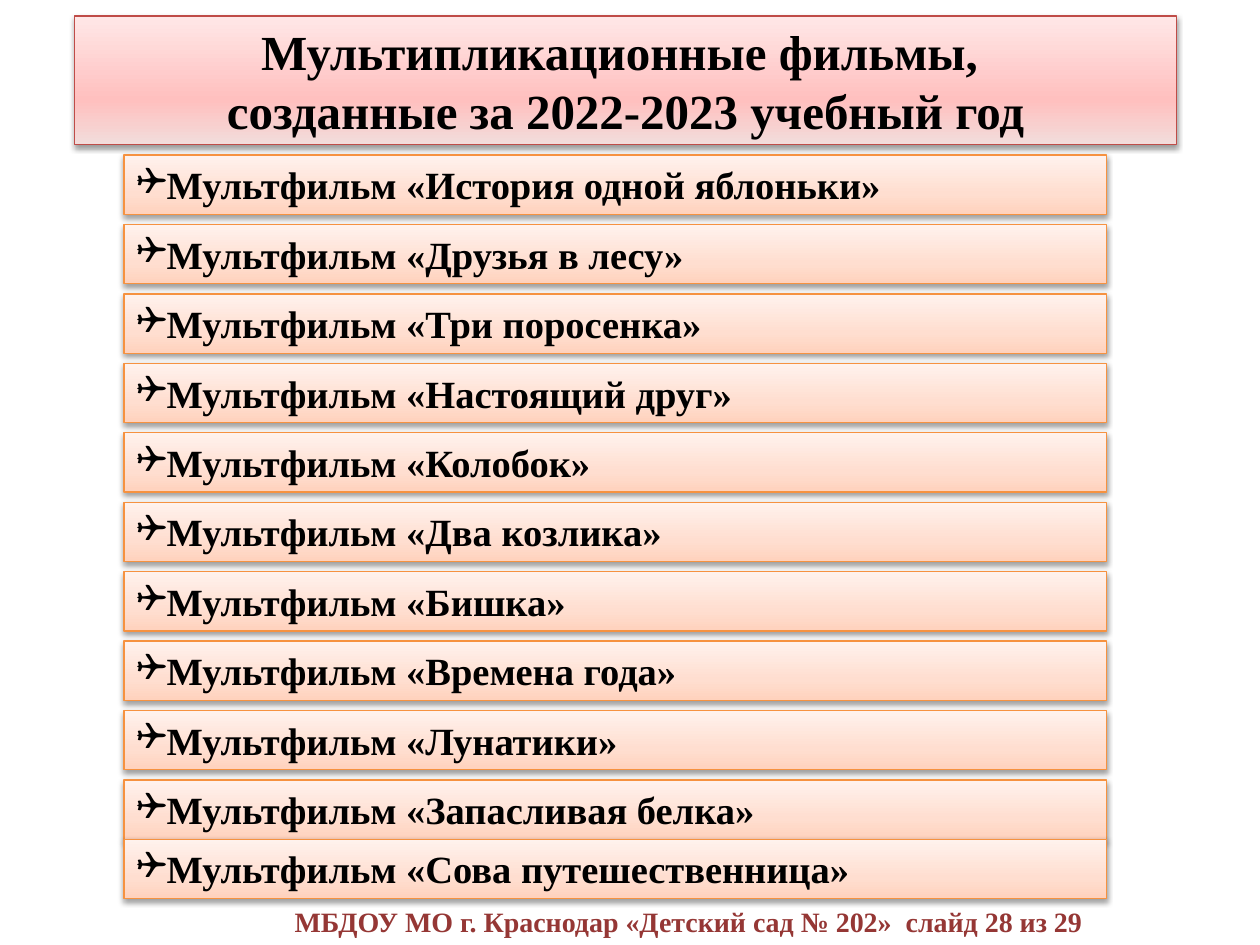
"""Build the slide that lists the cartoons made in the 2022-2023 school year."""
import dataclasses

import lxml.etree
import pptx
import pptx.dml.color
import pptx.enum.shapes
import pptx.enum.text
import pptx.oxml.ns
import pptx.util

Pt = pptx.util.Pt
qn = pptx.oxml.ns.qn
ALIGN = pptx.enum.text.PP_ALIGN
ANCHOR = pptx.enum.text.MSO_ANCHOR
AUTO_SIZE = pptx.enum.text.MSO_AUTO_SIZE

COLORS = {
    "text": "000000",
    "footer": "953735",
    "shadow": "000000",
    "title_line": "BF4C48",
    "title_bottom": "F2DCDB",
    "title_middle": "FFC0BF",
    "title_top": "FFE7E7",
    "film_line": "F69240",
    "film_bottom": "FFD2BD",
    "film_middle": "FFDED0",
    "film_top": "FFF2ED",
}

HEADING = ["Мультипликационные фильмы, ", "созданные за 2022-2023 учебный год"]
FOOTER = "МБДОУ МО г. Краснодар «Детский сад № 202»  слайд 28 из 29"
FILMS = [
    "История одной яблоньки",
    "Друзья в лесу",
    "Три поросенка",
    "Настоящий друг",
    "Колобок",
    "Два козлика",
    "Бишка",
    "Времена года",
    "Лунатики",
    "Запасливая белка",
    "Сова путешественница",
]
FIRST_TOP, FILM_STEP, FILM_HEIGHT = 88.6, 39.68, 33.9


@dataclasses.dataclass
class Film:
    name: str
    top: float


def rgb(key: str) -> pptx.dml.color.RGBColor:
    """Return the named colour."""
    return pptx.dml.color.RGBColor.from_string(COLORS[key])


def place(shape, left: float, top: float, width: float, height: float) -> None:
    """Set the position and size of a shape in points."""
    shape.left, shape.top = Pt(left), Pt(top)
    shape.width, shape.height = Pt(width), Pt(height)


def add_color(parent, key: str):
    """Append the named colour to an XML element and return it."""
    return lxml.etree.SubElement(parent, qn("a:srgbClr"), val=COLORS[key])


def style_panel(shape, theme: str) -> None:
    """Give a panel its upward gradient, thin outline and soft shadow."""
    shape.fill.gradient()
    shape.fill.gradient_angle = 90
    stops = shape._element.spPr.find(".//" + qn("a:gsLst"))
    for stop in list(stops):
        stops.remove(stop)
    for percent, part in ((0, "bottom"), (35, "middle"), (100, "top")):
        stop = lxml.etree.SubElement(stops, qn("a:gs"), pos=str(percent * 1000))
        add_color(stop, f"{theme}_{part}")
    shape.line.color.rgb = rgb(f"{theme}_line")
    shape.line.width = Pt(0.75)
    shape.shadow.inherit = False
    effects = shape._element.spPr.find(qn("a:effectLst"))
    shadow = lxml.etree.SubElement(
        effects, qn("a:outerShdw"), blurRad=str(Pt(3.1)), dist=str(Pt(1.6)),
        dir="5400000", rotWithShape="0")
    lxml.etree.SubElement(add_color(shadow, "shadow"), qn("a:alpha"), val="38000")


def write_text(shape, lines: list[str], *, size: float, color: str = "text",
               align=ALIGN.LEFT, anchor=ANCHOR.TOP, wrap: bool = True,
               auto_size=AUTO_SIZE.SHAPE_TO_FIT_TEXT, bullet: str = "") -> None:
    """Write one bold paragraph per line with the given format."""
    frame = shape.text_frame
    frame.word_wrap = wrap
    frame.auto_size = auto_size
    frame.vertical_anchor = anchor
    for index, line in enumerate(lines):
        paragraph = frame.add_paragraph() if index else frame.paragraphs[0]
        paragraph.alignment = align
        if bullet:
            properties = paragraph._p.get_or_add_pPr()
            lxml.etree.SubElement(properties, qn("a:buFont"), typeface="Wingdings")
            lxml.etree.SubElement(properties, qn("a:buChar"), char=bullet)
        run = paragraph.add_run()
        run.text = line
        run.font.name = "Times New Roman"
        run.font.size = Pt(size)
        run.font.bold = True
        run.font.color.rgb = rgb(color)


def draw_film(slide, film: Film) -> None:
    """Draw the panel of one film."""
    panel = slide.shapes.add_shape(
        pptx.enum.shapes.MSO_SHAPE.RECTANGLE,
        Pt(70.8), Pt(film.top), Pt(561.6), Pt(FILM_HEIGHT))
    style_panel(panel, "film")
    write_text(panel, [f"Мультфильм «{film.name}»"], size=22, bullet="❑")


def main() -> None:
    """Build and save the presentation."""
    presentation = pptx.Presentation()
    presentation.slide_width, presentation.slide_height = Pt(720), Pt(540)
    slide = presentation.slides.add_slide(presentation.slide_layouts[5])

    heading = slide.shapes.title
    place(heading, 42.5, 9.2, 630, 73.6)
    style_panel(heading, "title")
    write_text(heading, HEADING, size=28, align=ALIGN.CENTER,
               anchor=ANCHOR.MIDDLE, auto_size=AUTO_SIZE.NONE)

    footer = slide.shapes.add_textbox(Pt(161.3), Pt(513.4), Pt(475.2), Pt(26.6))
    write_text(footer, [FOOTER], size=16, color="footer", wrap=False)

    films = [Film(name, FIRST_TOP + index * FILM_STEP)
             for index, name in enumerate(FILMS)]
    films[-1].top = films[-2].top + FILM_HEIGHT
    for film in films:
        draw_film(slide, film)

    presentation.save("out.pptx")


if __name__ == "__main__":
    main()
